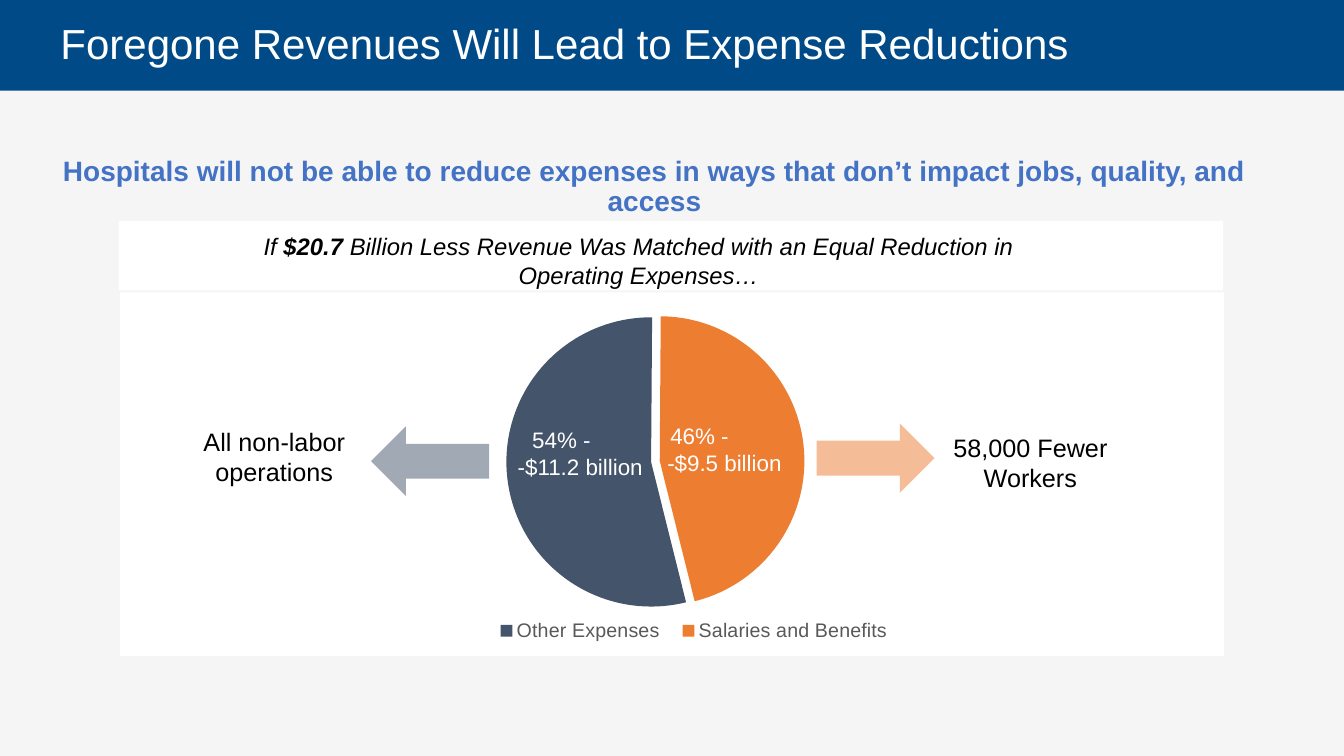
"""Build the slide on foregone revenues and expense reductions."""
from dataclasses import dataclass

import lxml.etree
import pptx
import pptx.chart.chart
import pptx.chart.data
import pptx.dml.color
import pptx.enum.chart
import pptx.enum.shapes
import pptx.enum.text
import pptx.oxml
import pptx.oxml.ns
import pptx.slide
import pptx.util

PX = 9144
FONT = "Arial"
RGBColor = pptx.dml.color.RGBColor
WHITE = RGBColor(0xFF, 0xFF, 0xFF)
BLACK = RGBColor(0x00, 0x00, 0x00)
PALE = RGBColor(0xF5, 0xF5, 0xF5)
NAVY = RGBColor(0x00, 0x4B, 0x87)
BLUE = RGBColor(0x44, 0x72, 0xC4)
SLATE = RGBColor(0x44, 0x54, 0x6A)
ORANGE = RGBColor(0xED, 0x7D, 0x31)
GREY = RGBColor(0x59, 0x59, 0x59)
RECTANGLE = pptx.enum.shapes.MSO_SHAPE.RECTANGLE
ARROW = pptx.enum.shapes.MSO_SHAPE.RIGHT_ARROW
LEFT = pptx.enum.text.PP_ALIGN.LEFT
CENTER = pptx.enum.text.PP_ALIGN.CENTER
TOP = pptx.enum.text.MSO_ANCHOR.TOP
MIDDLE = pptx.enum.text.MSO_ANCHOR.MIDDLE
Frame = tuple[int, int, int, int]
Layout = tuple[float, float, float, float]


@dataclass(frozen=True)
class Block:
    """A filled shape."""

    frame: Frame
    color: RGBColor
    kind: pptx.enum.shapes.MSO_SHAPE = RECTANGLE
    rotation: int = 0
    opacity: int = 100


@dataclass(frozen=True)
class Line:
    """A paragraph; asterisks enclose bold words, and an indent aligns it left."""

    text: str
    indent: int = 0


@dataclass(frozen=True)
class Label:
    """A text box in one size and colour."""

    frame: Frame
    lines: tuple[Line, ...]
    size: int
    color: RGBColor = BLACK
    align: pptx.enum.text.PP_ALIGN = CENTER
    anchor: pptx.enum.text.MSO_ANCHOR = TOP
    insets: Frame = (10, 5, 10, 5)
    italic: bool = False
    spacing: float = 1.0


BACKDROP = (
    Block((0, 68, 1333, 682), PALE),
    Block((0, 0, 1333, 90), NAVY),
)
PANELS = (
    Block((118, 219, 1095, 69), WHITE),
    Block((810, 420, 117, 69), ORANGE, ARROW, 0, 50),
    Block((368, 423, 117, 69), SLATE, ARROW, 180, 50),
)
LABELS = (
    Label((0, 2, 1333, 88), (Line("Foregone Revenues Will Lead to Expense Reductions"),),
          30, WHITE, LEFT, MIDDLE, (60, 10, 10, 10), spacing=0.9),
    Label((24, 156, 1260, 62),
          (Line("*Hospitals will not be able to reduce expenses in ways that "
                "don’t impact jobs, quality, and access*"),),
          20, BLUE, insets=(0, 0, 10, 5), spacing=0.9),
    Label((233, 225, 801, 67),
          (Line("If *$20.7 *Billion Less Revenue Was Matched with an Equal "
                "Reduction in Operating Expenses…"),), 17, italic=True),
    Label((497, 418, 157, 64), (Line("54% -", 21), Line("-$11.2 billion")), 16, WHITE),
    Label((640, 414, 157, 64), (Line("46% -", 15), Line("-$9.5 billion")), 16, WHITE),
    Label((905, 424, 234, 71), (Line("58,000 Fewer Workers"),), 18),
    Label((155, 418, 234, 71), (Line("All non-labor operations"),), 18),
)
CHART_FRAME = (119, 290, 1095, 361)
EXPENSES = {"Other Expenses": (54, SLATE), "Salaries and Benefits": (46, ORANGE)}


def scaled(frame: Frame) -> list[int]:
    """Turn px lengths into EMU."""
    return [length * PX for length in frame]


def add_block(page: pptx.slide.Slide, block: Block) -> None:
    """Draw a filled shape without an outline."""
    shape = page.shapes.add_shape(block.kind, *scaled(block.frame))
    shape.shadow.inherit = False
    shape.rotation = block.rotation
    shape.fill.solid()
    shape.fill.fore_color.rgb = block.color
    shape.line.fill.background()
    if block.opacity < 100:
        color = shape.fill._xPr.find(".//" + pptx.oxml.ns.qn("a:srgbClr"))
        alpha = lxml.etree.SubElement(color, pptx.oxml.ns.qn("a:alpha"))
        alpha.set("val", str(block.opacity * 1000))


def add_label(page: pptx.slide.Slide, label: Label) -> None:
    """Write a text box."""
    box = page.shapes.add_textbox(*scaled(label.frame))
    frame = box.text_frame
    frame.word_wrap = True
    frame.vertical_anchor = label.anchor
    (frame.margin_left, frame.margin_top,
     frame.margin_right, frame.margin_bottom) = scaled(label.insets)
    frame.text = "\n".join(line.text.replace("*", "") for line in label.lines)
    for para, line in zip(frame.paragraphs, label.lines):
        para.alignment = LEFT if line.indent else label.align
        para.line_spacing = label.spacing
        if line.indent:
            para._p.get_or_add_pPr().set("marL", str(line.indent * PX))
        if "*" in line.text:
            para.clear()
            for index, words in enumerate(line.text.split("*")):
                if words:
                    span = para.add_run()
                    span.text = words
                    span.font.bold = index % 2 == 1
        for span in para.runs:
            span.font.name = FONT
            span.font.size = pptx.util.Pt(label.size)
            span.font.color.rgb = label.color
            span.font.italic = label.italic


def chart_xml(body: str) -> lxml.etree._Element:
    """Parse a chart element given without namespace declarations."""
    tag, rest = body.split(">", 1)
    closing = "/" if tag.endswith("/") else ""
    spaces = pptx.oxml.ns.nsdecls("c", "a")
    return pptx.oxml.parse_xml(f"{tag.rstrip('/')} {spaces}{closing}>{rest}")


def layout_xml(layout: Layout, target: str = "") -> lxml.etree._Element:
    """Make a manual layout from left, top, width and height fractions."""
    values = "".join(f'<c:{key} val="{value}"/>' for key, value in zip("xywh", layout))
    modes = '<c:xMode val="edge"/><c:yMode val="edge"/>'
    return chart_xml(f"<c:layout><c:manualLayout>{target}{modes}{values}"
                     "</c:manualLayout></c:layout>")


def drop_layout(parent: lxml.etree._Element) -> None:
    """Remove an automatic layout."""
    for old in parent.findall(pptx.oxml.ns.qn("c:layout")):
        parent.remove(old)


def add_pie(page: pptx.slide.Slide) -> None:
    """Draw the expense pie with its legend."""
    data = pptx.chart.data.CategoryChartData()
    data.categories = list(EXPENSES)
    data.add_series("Series 1", [value for value, _ in EXPENSES.values()])
    chart = page.shapes.add_chart(
        pptx.enum.chart.XL_CHART_TYPE.PIE, *scaled(CHART_FRAME), data).chart
    chart.has_title = False
    chart.font.name = FONT
    chart.font.size = pptx.util.Pt(14)
    chart.font.color.rgb = GREY
    chart.has_legend = True
    chart.legend.position = pptx.enum.chart.XL_LEGEND_POSITION.BOTTOM
    chart.legend.include_in_layout = False
    chart.plots[0].vary_by_categories = True

    space = chart._chartSpace
    plot_area, pie, series, category, legend_place, body = (
        space.find(".//" + pptx.oxml.ns.qn(tag)) for tag in
        ("c:plotArea", "c:pieChart", "c:ser", "c:cat", "c:legendPos", "c:chart"))
    category.addprevious(chart_xml('<c:explosion val="3"/>'))
    for index, (_, color) in enumerate(EXPENSES.values()):
        fill = chart.plots[0].series[0].points[index].format.fill
        fill.solid()
        fill.fore_color.rgb = color
    pie.append(chart_xml('<c:firstSliceAng val="166"/>'))
    drop_layout(plot_area)
    plot_area.insert(0, layout_xml((0.35, 0.05, 0.27, 0.83),
                                   '<c:layoutTarget val="inner"/>'))
    drop_layout(legend_place.getparent())
    legend_place.addnext(layout_xml((0.33, 0.88, 0.38, 0.1)))
    body.addnext(chart_xml(f'<c:spPr><a:solidFill><a:srgbClr val="{WHITE}"/></a:solidFill>'
                           "<a:ln><a:noFill/></a:ln></c:spPr>"))


def main() -> None:
    """Build and save the deck."""
    deck = pptx.Presentation()
    deck.slide_width, deck.slide_height = 1333 * PX, 750 * PX
    page = deck.slides.add_slide(deck.slide_layouts[6])
    for block in BACKDROP:
        add_block(page, block)
    add_pie(page)
    for block in PANELS:
        add_block(page, block)
    for label in LABELS:
        add_label(page, label)
    deck.save("out.pptx")


if __name__ == "__main__":
    main()
